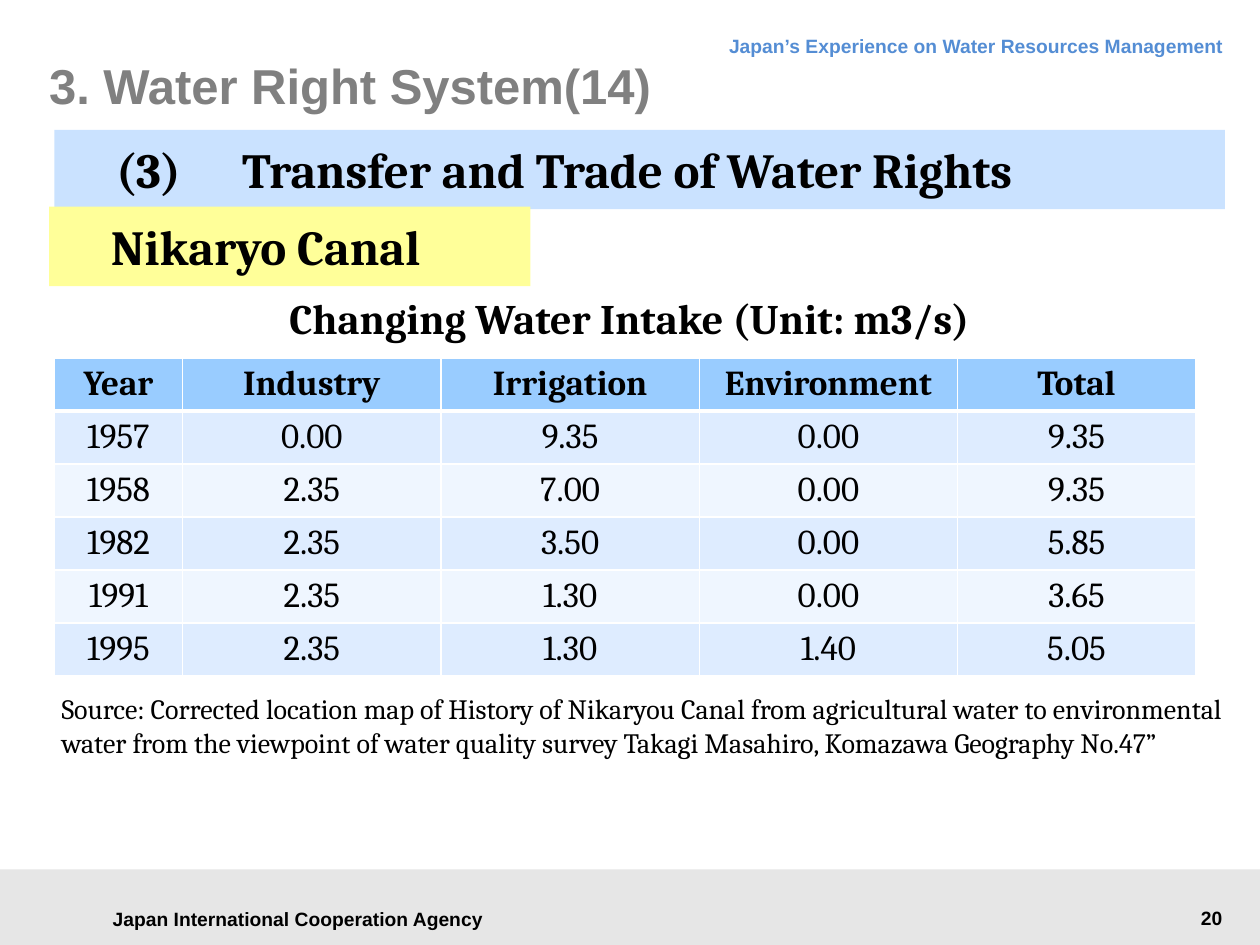
"""Build the slide on changing water intake of the Nikaryo Canal."""
from lxml.etree import SubElement
from pptx import Presentation
from pptx.dml.color import RGBColor
from pptx.enum.shapes import MSO_SHAPE
from pptx.enum.text import MSO_ANCHOR, PP_ALIGN
from pptx.oxml.ns import qn
from pptx.util import Pt

COLORS = {
    "black": "000000", "white": "FFFFFF", "title": "808080", "running_head": "548DD4",
    "footer": "E6E6E6", "banner": "CAE2FF", "canal": "FFFF99",
    "header": "99CCFF", "odd": "DEECFF", "even": "EFF6FF",
}
PLAIN_INSETS = (7.2, 3.6, 7.2, 3.6)
BANNER_INSETS = (31, 5.76, 25.2, 5.76)
LEFT, CENTER, RIGHT = PP_ALIGN.LEFT, PP_ALIGN.CENTER, PP_ALIGN.RIGHT

INTAKE = [
    ("Year", "Industry", "Irrigation", "Environment", "Total"),
    ("1957", "0.00", "9.35", "0.00", "9.35"),
    ("1958", "2.35", "7.00", "0.00", "9.35"),
    ("1982", "2.35", "3.50", "0.00", "5.85"),
    ("1991", "2.35", "1.30", "0.00", "3.65"),
    ("1995", "2.35", "1.30", "1.40", "5.05"),
]
INTAKE_LEFT, INTAKE_TOP, ROW_HEIGHT = 31, 204.5, 30.3
COLUMN_WIDTHS = (73.4, 147.6, 147.6, 147.6, 136)

TEXTS = [
    dict(text="Japan International Cooperation Agency", box=(51.1, 512.6, 238.3, 24.5),
         size=11, bold=True, align=CENTER, anchor=MSO_ANCHOR.MIDDLE),
    dict(text="Japan’s Experience on Water Resources Management", box=(203, 11.5, 503.3, 27.4),
         size=11, bold=True, color="running_head", align=RIGHT, spacing=18),
    dict(text="20", box=(592.6, 514.1, 113, 20.9), size=11, bold=True, align=RIGHT),
    dict(text="3. Water Right System(14)", box=(28.1, 20.2, 648, 56.9), size=28, bold=True,
         color="title", insets=(0, 0, 0, 0), anchor=MSO_ANCHOR.MIDDLE),
    dict(text="Changing Water Intake (Unit: m3/s)", box=(91.4, 163.4, 536.4, 36), size=24,
         font="Cambria", bold=True, align=CENTER, fill="white"),
    dict(text="(3)\tTransfer and Trade of Water Rights", box=(31, 74.2, 668.9, 45.4), size=28,
         font="Cambria", bold=True, fill="banner", insets=BANNER_INSETS, indent=4.3),
    dict(text="Source: Corrected location map of History of Nikaryou Canal from agricultural water "
              "to environmental water from the viewpoint of water quality survey Takagi Masahiro, "
              "Komazawa Geography No.47”",
         box=(28.1, 391.7, 691.9, 65.5), size=16, font="Cambria"),
    dict(text="Nikaryo Canal", box=(28.1, 118.1, 275, 45.4), size=28, font="Cambria", bold=True,
         fill="canal", insets=BANNER_INSETS, indent=4.3),
]


def rgb(name):
    return RGBColor.from_string(COLORS[name])


def style(paragraph, font, size, bold, color, align):
    paragraph.alignment = align
    for run in paragraph.runs:
        run.font.name, run.font.size, run.font.bold = font, Pt(size), bold
        run.font.color.rgb = rgb(color)


def add_panel(slide, box, fill):
    panel = slide.shapes.add_shape(MSO_SHAPE.RECTANGLE, *map(Pt, box))
    panel.shadow.inherit = False
    panel.fill.solid()
    panel.fill.fore_color.rgb = rgb(fill)
    panel.line.fill.background()
    return panel


def add_text(slide, text, box, size, font="Arial", bold=False, color="black", align=LEFT,
             anchor=MSO_ANCHOR.TOP, insets=PLAIN_INSETS, fill=None, indent=0, spacing=None):
    holder = add_panel(slide, box, fill) if fill else slide.shapes.add_textbox(*map(Pt, box))
    frame = holder.text_frame
    frame.word_wrap = True
    frame.vertical_anchor = anchor
    frame.margin_left, frame.margin_top, frame.margin_right, frame.margin_bottom = map(Pt, insets)
    frame.text = text
    paragraph = frame.paragraphs[0]
    if indent:
        paragraph._p.get_or_add_pPr().set("marL", str(Pt(indent)))
    if spacing:
        paragraph.line_spacing = Pt(spacing)
    style(paragraph, font, size, bold, color, align)


def add_borders(cell, widths):
    properties = cell._tc.get_or_add_tcPr()
    for side, width in zip("LRTB", widths):
        line = SubElement(properties, qn(f"a:ln{side}"), w=str(Pt(width)))
        SubElement(SubElement(line, qn("a:solidFill")), qn("a:srgbClr"), val=COLORS["white"])


def add_intake(slide):
    size = (sum(COLUMN_WIDTHS), ROW_HEIGHT * len(INTAKE))
    table = slide.shapes.add_table(len(INTAKE), len(COLUMN_WIDTHS),
                                   *map(Pt, (INTAKE_LEFT, INTAKE_TOP, *size))).table
    for column, width in zip(table.columns, COLUMN_WIDTHS):
        column.width = Pt(width)
    for r, values in enumerate(INTAKE):
        table.rows[r].height = Pt(ROW_HEIGHT)
        is_header = r == 0
        fill = "header" if is_header else ("even", "odd")[r % 2]
        for c, value in enumerate(values):
            cell = table.cell(r, c)
            cell.text = value
            style(cell.text_frame.paragraphs[0], "Cambria", 20, is_header, "black", CENTER)
            add_borders(cell, (1, 1, 3 if r == 1 else 1, 3 if is_header else 1))
            cell.fill.solid()
            cell.fill.fore_color.rgb = rgb(fill)


def main():
    deck = Presentation()
    deck.slide_width, deck.slide_height = Pt(720), Pt(540)
    slide = deck.slides.add_slide(deck.slide_layouts[6])
    add_panel(slide, (0, 496.8, 720, 43.2), "footer")
    add_intake(slide)
    for entry in TEXTS:
        add_text(slide, **entry)
    deck.save("out.pptx")


if __name__ == "__main__":
    main()
